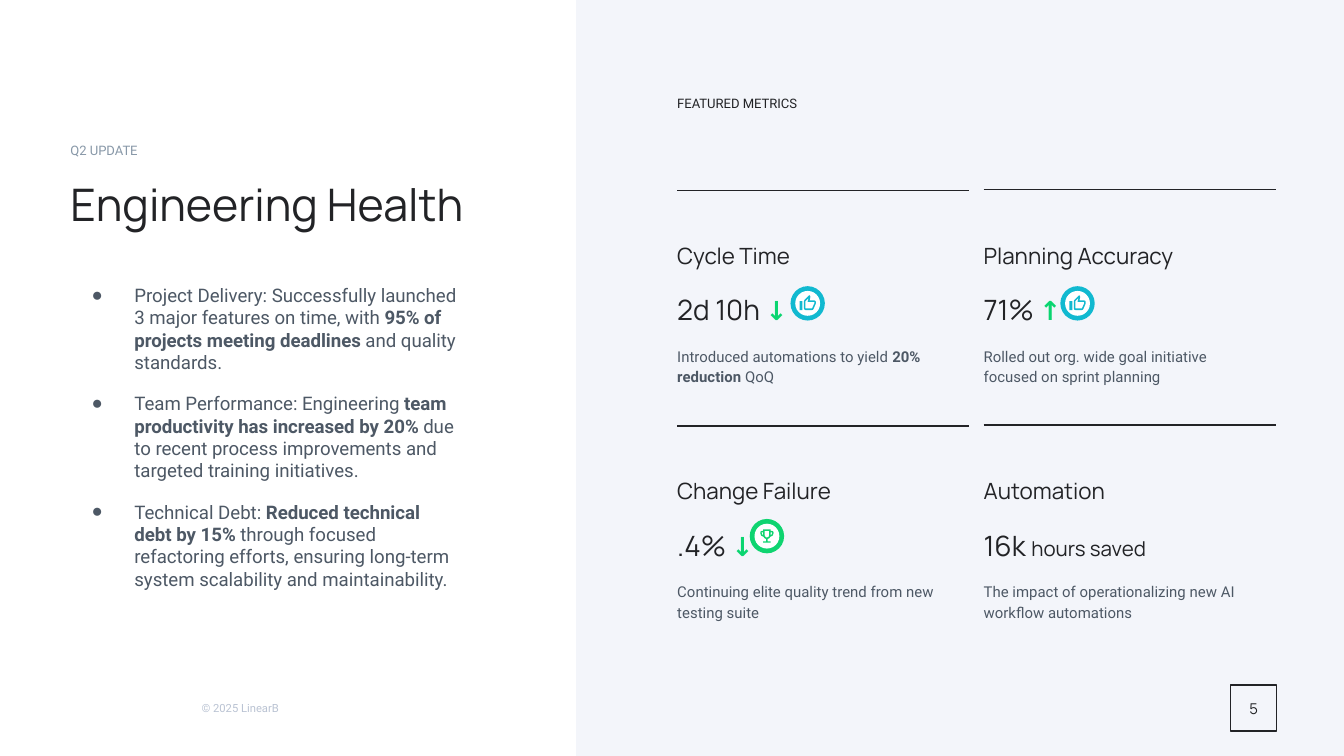
from lxml.etree import SubElement
from pptx import Presentation
from pptx.dml.color import RGBColor
from pptx.enum.shapes import MSO_CONNECTOR, MSO_SHAPE
from pptx.enum.text import MSO_ANCHOR, MSO_AUTO_SIZE, PP_ALIGN
from pptx.oxml.ns import qn
from pptx.util import Cm, Pt

INK = RGBColor(0x22, 0x23, 0x26)
SLATE = RGBColor(0x4D, 0x58, 0x65)
MUTED = RGBColor(0x88, 0x98, 0xA8)
PALE = RGBColor(0xBA, 0xC3, 0xD3)
PANEL = RGBColor(0xF3, 0xF5, 0xFA)
WHITE = RGBColor(0xFF, 0xFF, 0xFF)
TEAL = RGBColor(0x11, 0xB9, 0xD0)
GREEN = RGBColor(0x0F, 0xD4, 0x70)
ARROW_GREEN = RGBColor(0x0A, 0xD5, 0x70)
HEADING, BODY = "Manrope", "Roboto"

THUMB = [
    [(90, 210), (180, 210), (192, 206), (198, 198), (229, 127), (230, 120), (230, 100),
     (224, 86), (210, 80), (147, 80), (156, 34), (157, 31), (152, 20), (142, 10),
     (76, 76), (70, 90), (70, 190), (76, 204)],
    [(90, 90), (133, 47), (120, 100), (210, 100), (210, 120), (180, 190), (90, 190)],
    [(10, 90), (50, 90), (50, 210), (10, 210)],
]
TROPHY = [
    [(190, 50), (170, 50), (170, 30), (70, 30), (70, 50), (50, 50), (36, 56), (30, 70),
     (30, 80), (42, 113), (74, 129), (88, 149), (110, 159), (110, 190), (70, 190),
     (70, 210), (170, 210), (170, 190), (130, 190), (130, 159), (152, 149), (166, 129),
     (198, 113), (210, 80), (210, 70), (204, 56)],
    [(50, 80), (50, 70), (70, 70), (70, 108), (56, 98)],
    [(120, 140), (99, 131), (90, 110), (90, 50), (150, 50), (150, 110), (141, 131)],
    [(190, 80), (184, 98), (170, 108), (170, 70), (190, 70)],
]

BULLETS = [
    [("Project Delivery: Successfully launched 3 major features on time, with ", False),
     ("95% of projects meeting deadlines", True), (" and quality standards.", False)],
    [("Team Performance: Engineering ", False),
     ("team productivity has increased by 20%", True),
     (" due to recent process improvements and targeted training initiatives.", False)],
    [("Technical Debt: ", False), ("Reduced technical debt by 15% ", True),
     ("through focused refactoring efforts, ensuring long-term system scalability "
      "and maintainability.", False)],
]
METRICS = [
    ("Cycle Time", "2d 10h ", "↓", "",
     [("Introduced automations to yield ", False), ("20% reduction", True), (" QoQ", False)]),
    ("Planning Accuracy", "71% ", "↑", "",
     [("Rolled out org. wide goal initiative focused on sprint planning", False)]),
    ("Change Failure", ".4% ", "↓", "",
     [("Continuing elite quality trend from new testing suite", False)]),
    ("Automation", "16k ", "", "hours saved",
     [("The impact of operationalizing new AI workflow automations", False)]),
]
BADGES = [(14.94, 5.41, TEAL, THUMB), (20.04, 5.41, TEAL, THUMB), (14.17, 9.81, GREEN, TROPHY)]


def style(font, face, size, colour):
    """Set typeface, point size and colour of a font."""
    font.name, font.size = face, Pt(size)
    font.color.rgb = colour


def place(shape, left, top, width, height):
    """Move and size a shape in centimetres."""
    shape.left, shape.top, shape.width, shape.height = map(Cm, (left, top, width, height))


def prepare_frame(shape, inset=0, anchor=MSO_ANCHOR.TOP):
    """Give a text frame equal insets, wrapping and an anchor."""
    frame = shape.text_frame
    frame.auto_size = MSO_AUTO_SIZE.NONE
    frame.word_wrap = True
    frame.vertical_anchor = anchor
    frame.margin_left = frame.margin_right = Cm(inset)
    frame.margin_top = frame.margin_bottom = Cm(inset)
    return frame


def add_text(slide, box, inset=0, anchor=MSO_ANCHOR.TOP):
    """Add a text box and return its frame."""
    return prepare_frame(slide.shapes.add_textbox(*map(Cm, box)), inset, anchor)


def add_block(slide, preset, box, fill=None):
    """Add a flat preset shape without an outline."""
    block = slide.shapes.add_shape(preset, *map(Cm, box))
    block.shadow.inherit = False
    if fill is None:
        block.fill.background()
    else:
        block.fill.solid()
        block.fill.fore_color.rgb = fill
    block.line.fill.background()
    return block


def add_runs(paragraph, runs):
    """Append runs given as text and boldness."""
    for text, bold in runs:
        run = paragraph.add_run()
        run.text = text
        run.font.bold = bold


def fill_title(title):
    """Write the kicker and the heading into the title placeholder."""
    place(title, 1.27, 2.69, 9.37, 2.03)
    frame = prepare_frame(title)
    kicker, heading = frame.paragraphs[0], frame.add_paragraph()
    kicker.text, heading.text = "Q2 UPDATE", "Engineering Health"
    kicker.alignment = heading.alignment = PP_ALIGN.LEFT
    kicker._p.get_or_add_pPr().set("marL", str(Cm(0.06)))
    style(kicker.font, BODY, 7, MUTED)
    heading.space_before = heading.space_after = Pt(10)
    style(heading.font, HEADING, 24, INK)


def fill_bullets(body):
    """Write the update list into the body placeholder."""
    place(body, 1.27, 5.36, 7.44, 5.84)
    frame = prepare_frame(body)
    for index, runs in enumerate(BULLETS):
        update = frame.add_paragraph() if index else frame.paragraphs[0]
        properties = update._p.get_or_add_pPr()
        properties.set("marL", str(Cm(1.27)))
        properties.set("indent", str(Cm(-0.81)))
        colour = SubElement(SubElement(properties, qn("a:buClr")), qn("a:srgbClr"))
        colour.set("val", str(SLATE))
        SubElement(properties, qn("a:buChar")).set("char", "●")
        update.space_before = Pt(10 if index else 0)
        style(update.font, BODY, 10, SLATE)
        add_runs(update, runs)


def add_rule(slide, left, top):
    """Draw the thin line above a metric."""
    rule = slide.shapes.add_connector(
        MSO_CONNECTOR.STRAIGHT, Cm(left), Cm(top), Cm(left + 5.52), Cm(top))
    rule.line.color.rgb = INK
    rule.line.width = Pt(0.75)
    SubElement(rule._element.spPr, qn("a:effectLst"))


def add_metric(slide, left, top, metric):
    """Add a metric with its name, value, trend and comment."""
    name, value, arrow, unit, comment = metric
    frame = add_text(slide, (left, top, 4.9, 2.77))
    heading, figure, remark = frame.paragraphs[0], frame.add_paragraph(), frame.add_paragraph()
    for paragraph in frame.paragraphs:
        paragraph.line_spacing = 1.15
    figure.space_before = remark.space_before = Pt(10)
    heading.text = name
    style(heading.font, HEADING, 12, INK)
    parts = [(value, HEADING, 15, INK), (arrow, BODY, 14, ARROW_GREEN), (unit, HEADING, 11, INK)]
    for text, face, size, colour in parts:
        if text:
            run = figure.add_run()
            run.text = text
            run.font.bold = text == arrow
            style(run.font, face, size, colour)
    style(remark.font, BODY, 8, SLATE)
    add_runs(remark, comment)


def add_badge(slide, left, top, colour, outlines):
    """Draw a ringed badge with an icon at its centre."""
    size, ring, unit = 0.65, 0.09, 0.0014
    disc = add_block(slide, MSO_SHAPE.ROUNDED_RECTANGLE, (left, top, size, size), colour)
    disc.adjustments[0] = 0.5
    inner = size - 2 * ring
    add_block(slide, MSO_SHAPE.OVAL, (left + ring, top + ring, inner, inner), WHITE)
    builder = slide.shapes.build_freeform(*outlines[0][0], scale=float(Cm(unit)))
    builder.add_line_segments(outlines[0][1:], close=True)
    for outline in outlines[1:]:
        builder.move_to(*outline[0])
        builder.add_line_segments(outline[1:], close=True)
    offset = size / 2 - 120 * unit
    icon = builder.convert_to_shape(Cm(left + offset), Cm(top + offset))
    icon.shadow.inherit = False
    icon.fill.solid()
    icon.fill.fore_color.rgb = colour
    icon.line.fill.background()


def add_page_number(slide):
    """Add the framed page number."""
    frame_box = add_block(slide, MSO_SHAPE.RECTANGLE, (23.26, 12.95, 0.87, 0.87))
    frame_box.line.color.rgb = INK
    frame_box.line.width = Pt(0.75)
    number = prepare_frame(frame_box, 0.25, MSO_ANCHOR.MIDDLE).paragraphs[0]
    number.text = "5"
    number.alignment = PP_ALIGN.CENTER
    style(number.font, HEADING, 8, INK)


def main():
    """Build the engineering health slide."""
    deck = Presentation()
    deck.slide_width, deck.slide_height = Cm(25.4), Cm(14.29)
    slide = deck.slides.add_slide(deck.slide_layouts[1])
    add_block(slide, MSO_SHAPE.RECTANGLE, (10.89, 0, 14.51, 14.29), PANEL)
    fill_title(slide.shapes.title)
    fill_bullets(slide.placeholders[1])

    copyright_line = add_text(slide, (3.56, 12.47, 5.87, 1.8), 0.25, MSO_ANCHOR.MIDDLE).paragraphs[0]
    copyright_line.text = "© 2025 LinearB"
    copyright_line.line_spacing = 1.15
    style(copyright_line.font, BODY, 6, PALE)
    section = add_text(slide, (12.8, 1.8, 9.65, 0.3)).paragraphs[0]
    section.text = "FEATURED METRICS"
    style(section.font, BODY, 7, INK)

    for index, metric in enumerate(METRICS):
        row, column = divmod(index, 2)
        left, top = 12.8 + column * 5.79, 4.5 + row * 4.45
        add_rule(slide, left, top - 0.9 - column * 0.02)
        add_metric(slide, left, top, metric)
    for badge in BADGES:
        add_badge(slide, *badge)
    add_page_number(slide)
    deck.save("out.pptx")


if __name__ == "__main__":
    main()
